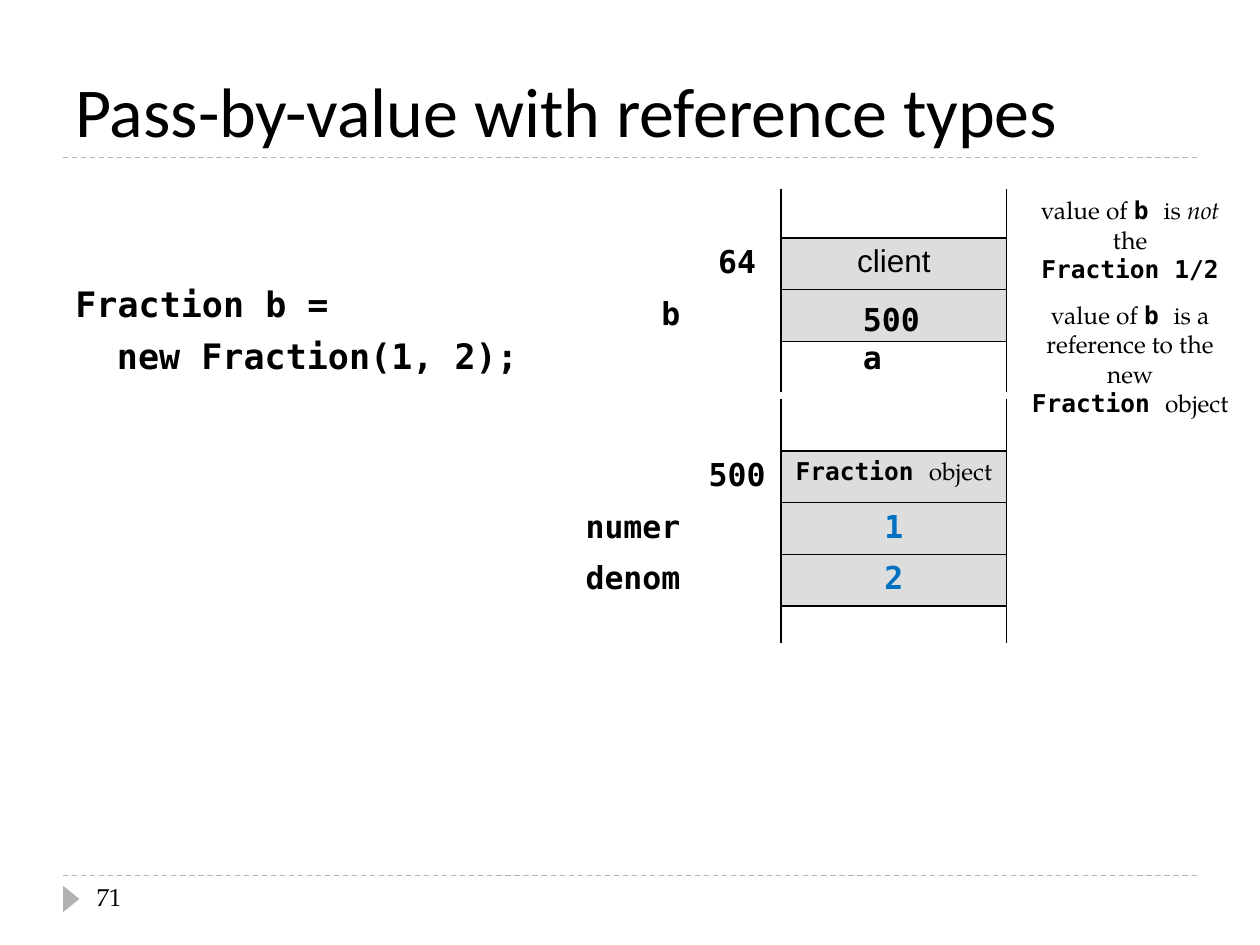
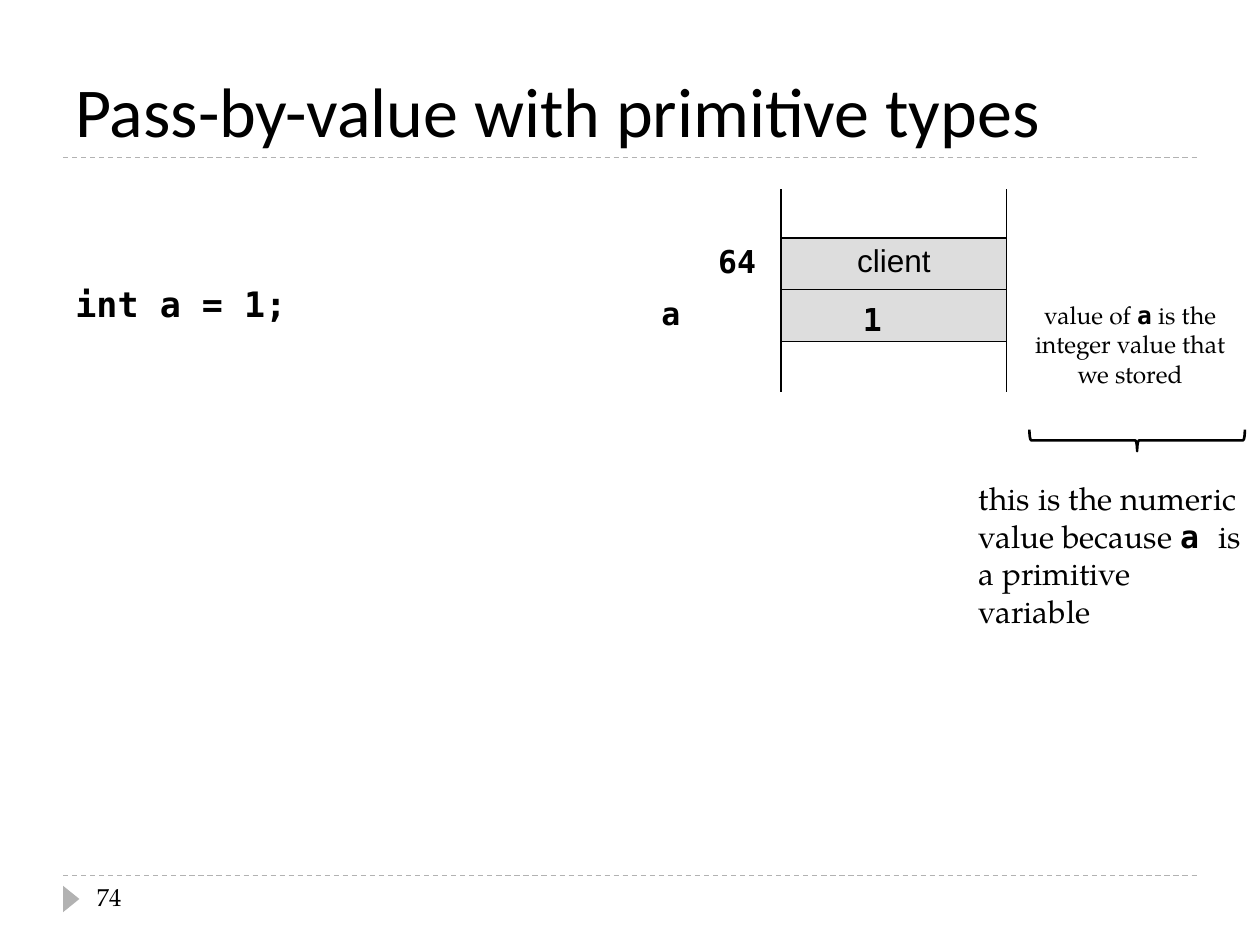
from dataclasses import dataclass
from lxml.etree import SubElement
from pptx import Presentation
from pptx.dml.color import RGBColor
from pptx.enum.dml import MSO_LINE
from pptx.enum.shapes import MSO_CONNECTOR, MSO_SHAPE
from pptx.enum.text import MSO_ANCHOR, PP_ALIGN
from pptx.oxml.ns import qn
from pptx.util import Inches, Pt


@dataclass(frozen=True)
class Theme:
    ink: str = "000000"
    rule: str = "B2B2B2"
    shade: str = "DDDDDD"
    blue: str = "0070C0"
    head: str = "Calibri"
    serif: str = "TeX Gyre Pagella"
    mono: str = "DejaVu Sans Mono"
    sans: str = "Arial"
    title: int = 40
    code: int = 20
    label: int = 18
    note: int = 14
    blank: int = 8


THEME = Theme()
CODE = dict(font=THEME.mono, bold=True)
NO_STYLE = "{2D5ABB26-0587-4C30-8999-92F81FD0307C}"
CENTER, RIGHT = PP_ALIGN.CENTER, PP_ALIGN.RIGHT


def unit(count):
    """Turn grid steps into a length: 100 columns by 75 rows fill the slide."""
    return Inches(count / 10)


def code(text, **look):
    """A bold monospaced piece of a line."""
    return text, CODE | look


def write(frame, lines, align=None, after=0, indents=(), **look):
    """Fill a frame; a line is a string or a list of strings and (text, look) pairs."""
    base = dict(font=THEME.serif, size=THEME.note, color=THEME.ink, bold=False, italic=False)
    for i, line in enumerate(lines):
        para = frame.paragraphs[0] if i == 0 else frame.add_paragraph()
        para.alignment = align
        para.space_after = Pt(after)
        if i < len(indents):
            para._p.get_or_add_pPr().set("marL", str(unit(indents[i])))
        for part in [line] if isinstance(line, str) else line:
            text, extra = (part, {}) if isinstance(part, str) else part
            form = base | look | extra
            run = para.add_run()
            run.text = text
            font = run.font
            font.name, font.size = form["font"], Pt(form["size"])
            font.bold, font.italic = form["bold"], form["italic"]
            font.color.rgb = RGBColor.from_string(form["color"])


class Deck:
    def __init__(self, theme):
        self.theme = theme
        self.show = Presentation()
        self.show.slide_width, self.show.slide_height = unit(100), unit(75)
        self.slide = None

    # Shared frame: title, rules, marker and page number
    def page(self, title, number):
        look = self.theme
        self.slide = self.show.slides.add_slide(self.show.slide_layouts[6])
        for row in (69.5, 12.5):
            self.rule(5, row, 95)
        mark = self.shape(MSO_SHAPE.ISOSCELES_TRIANGLE, 4.6, 70.7, 2.1, 1.3, 90)
        mark.fill.solid()
        mark.fill.fore_color.rgb = RGBColor.from_string(look.rule)
        mark.line.fill.background()
        self.text([title], 5, 1.7, 90, 10.8, anchor=MSO_ANCHOR.BOTTOM,
                  font=look.head, size=look.title)
        self.text([str(number)], 6.7, 69.5, 21.7, 4)

    def rule(self, left, row, right):
        line = self.slide.shapes.add_connector(
            MSO_CONNECTOR.STRAIGHT, unit(left), unit(row), unit(right), unit(row))
        line.line.color.rgb = RGBColor.from_string(self.theme.rule)
        line.line.width = Pt(0.75)
        line.line.dash_style = MSO_LINE.DASH
        SubElement(line._element.spPr, qn("a:effectLst"))

    def shape(self, kind, left, top, width, height, turn=0):
        item = self.slide.shapes.add_shape(kind, *map(unit, (left, top, width, height)))
        item.shadow.inherit = False
        item.rotation = turn
        return item

    def brace(self, left, top, width, height):
        item = self.shape(MSO_SHAPE.LEFT_BRACE, left, top, width, height, 270)
        item.fill.background()
        item.line.color.rgb = RGBColor.from_string(self.theme.ink)
        item.line.width = Pt(1.5)

    def text(self, lines, left, top, width, height, anchor=MSO_ANCHOR.TOP, **look):
        box = self.slide.shapes.add_textbox(*map(unit, (left, top, width, height)))
        frame = box.text_frame
        frame.word_wrap = True
        frame.vertical_anchor = anchor
        write(frame, lines, **look)

    def source(self, lines, indents=()):
        self.text(lines, 5, 21.9, 50, 9, after=6, indents=indents,
                  size=self.theme.code, **CODE)

    def value(self, text, width):
        self.text([text], 67.5, 23.3, width, 4, size=self.theme.label, **CODE)

    def note(self, lines, top, height):
        self.text(lines, 80.2, top, 19, height, align=CENTER)

    # Memory diagram: names, addresses and shaded cells between open ends
    def memory(self, top, heights, rows):
        frame = self.slide.shapes.add_table(
            len(heights), 3, unit(43.3), unit(top), unit(36.6), unit(sum(heights)))
        table = frame.table
        table.first_row = table.horz_banding = False
        table._tbl.tblPr.find(qn("a:tableStyleId")).text = NO_STYLE
        for column, width in zip(table.columns, (11.7, 7, 17.9)):
            column.width = unit(width)
        ends = ("", "", "")
        for i, (height, row) in enumerate(zip(heights, [ends, *rows, ends])):
            table.rows[i].height = unit(height)
            shaded = 0 < i < len(heights) - 1
            sides = "LRTB" if shaded else "LRB" if i == 0 else "LRT"
            for j, (part, edge) in enumerate(zip(row, ("", "R", sides))):
                align = RIGHT if j == 0 else CENTER
                self.cell(table.cell(i, j), part, align, edge, shaded and j == 2)

    def cell(self, cell, part, align, edges, shaded):
        props = cell._tc.get_or_add_tcPr()
        for side in edges:
            line = SubElement(props, qn(f"a:ln{side}"), w=str(Pt(1)))
            fill = SubElement(line, qn("a:solidFill"))
            SubElement(fill, qn("a:srgbClr"), val=self.theme.ink)
        if shaded:
            cell.fill.solid()
            cell.fill.fore_color.rgb = RGBColor.from_string(self.theme.shade)
        else:
            cell.fill.background()
        if part:
            line = part if isinstance(part, list) else [part]
            write(cell.text_frame, [line], align=align, size=self.theme.label, **CODE)
        else:
            para = cell.text_frame.paragraphs[0]._p
            SubElement(para, qn("a:endParaRPr"), sz=str(self.theme.blank * 100))

    def client(self, name):
        self.memory(15, (3.9, 4.1, 4.1, 4),
                    [("", "64", ("client", dict(font=self.theme.sans, bold=False))),
                     (name, "", "")])


def types(deck):
    """Reference types: the variable holds an address."""
    look = deck.theme
    deck.page("Pass-by-value with reference types", 71)
    deck.source(["Fraction b =", "new Fraction(1, 2);"], indents=(0, 3.3))
    deck.client("b")
    plain = dict(font=look.serif, size=look.note, bold=False)
    blue = dict(color=look.blue)
    deck.memory(31.7, (4.1, 4.1, 4.1, 4.1, 2.9),
                [("", "500", [code("Fraction ", size=look.note), ("object", plain)]),
                 ("numer", "", ("1", blue)),
                 ("denom", "", ("2", blue))])
    deck.value("500a", 7.6)
    deck.note([["value of ", code("b "), "is a reference to the new"],
               [code("Fraction "), "object"]], 23.3, 10.4)
    deck.note([["value of ", code("b "), "is ", ("not", dict(italic=True)), " the"],
               [code("Fraction 1/2")]], 15, 5.7)


def basics(deck):
    """Primitive types: the variable holds the number itself."""
    deck.page("Pass-by-value with primitive types", 74)
    deck.source(["int a = 1;"])
    deck.client("a")
    deck.value("1", 3.5)
    deck.note([["value of ", code("a"), " is the"],
               "integer value that we stored"], 23.3, 8.1)
    deck.brace(89.4, 26.4, 1.7, 17.1)
    deck.text(["this is the numeric",
               ["value because ", code("a "), "is"],
               "a primitive variable"], 76.7, 37.5, 22.9, 10.1, size=deck.theme.label)


def main():
    deck = Deck(THEME)
    types(deck)
    basics(deck)
    deck.show.save("out.pptx")


if __name__ == "__main__":
    main()
